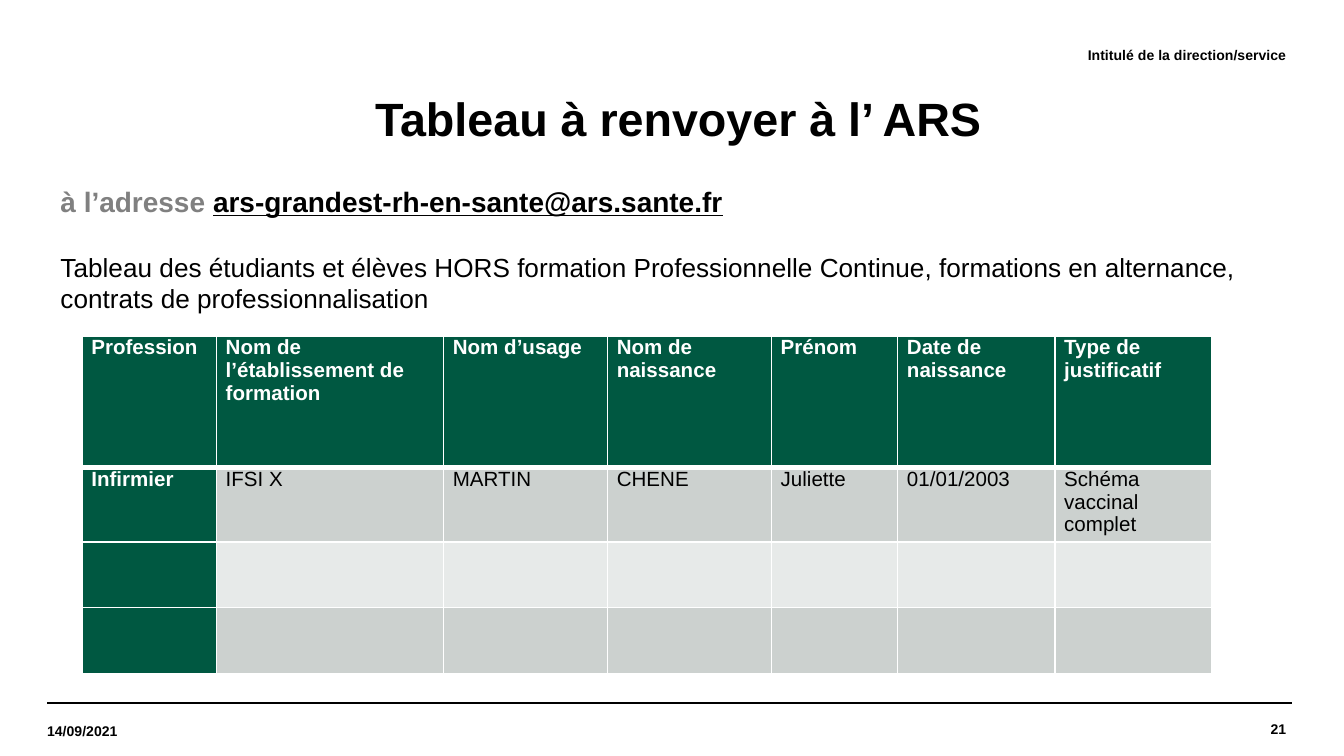
from lxml import etree
from pptx import Presentation
from pptx import util as u
from pptx.dml.color import RGBColor
from pptx.enum import shapes, text
from pptx.oxml.ns import qn

COLORS = {
    "black": "000000",
    "white": "FFFFFF",
    "gray": "808080",
    "green": "005841",
    "band_dark": "CCD1CF",
    "band_light": "E7EAE9",
}
FONT = "Arial"
COLUMN_WIDTHS = [1, 1.69, 1.22, 1.22, 0.94, 1.17, 1.17]
ROW_HEIGHTS = [0.98, 0.49, 0.49, 0.49]
ROWS = [
    ["Profession", "Nom de l’établissement de formation", "Nom d’usage",
     "Nom de naissance", "Prénom", "Date de naissance", "Type de justificatif"],
    ["Infirmier", "IFSI X", "MARTIN", "CHENE", "Juliette", "01/01/2003",
     "Schéma vaccinal complet"],
    [""] * 7,
    [""] * 7,
]


def color(name):
    return RGBColor.from_string(COLORS[name])


def format_font(font, size, color_name="black", bold=False, underline=None):
    font.name = FONT
    font.size = u.Pt(size)
    font.bold = bold
    font.underline = underline
    font.color.rgb = color(color_name)


def add_text(slide, box, runs, size, bold=False, align=text.PP_ALIGN.LEFT,
             anchor=text.MSO_ANCHOR.MIDDLE, indent=0):
    shape = slide.shapes.add_textbox(*[u.Inches(value) for value in box])
    frame = shape.text_frame
    frame.word_wrap = True
    frame.vertical_anchor = anchor
    frame.margin_left = frame.margin_right = 0
    frame.margin_top = frame.margin_bottom = 0
    paragraph = frame.paragraphs[0]
    paragraph.alignment = align
    if indent:
        paragraph._p.get_or_add_pPr().set("marL", str(u.Inches(indent)))
    for content, color_name, underline in runs:
        run = paragraph.add_run()
        run.text = content
        format_font(run.font, size, color_name, bold, underline)
    return paragraph


def add_rule(slide, left, right, top):
    line = slide.shapes.add_connector(
        shapes.MSO_CONNECTOR.STRAIGHT,
        u.Inches(left), u.Inches(top), u.Inches(right), u.Inches(top))
    line.line.color.rgb = color("black")
    line.line.width = u.Pt(0.8)
    etree.SubElement(line._element.spPr, qn("a:effectLst"))


def set_borders(cell, widths):
    properties = cell._tc.get_or_add_tcPr()
    for position, (side, width) in enumerate(widths.items()):
        border = etree.Element(qn(f"a:ln{side}"), w=str(u.Pt(width)))
        fill = etree.SubElement(border, qn("a:solidFill"))
        etree.SubElement(fill, qn("a:srgbClr"), val=COLORS["white"])
        properties.insert(position, border)


def format_cell(cell, content, row, column):
    is_heading = row == 0 or column == 0
    band = "band_dark" if row % 2 else "band_light"
    cell.fill.solid()
    cell.fill.fore_color.rgb = color("green" if is_heading else band)
    cell.margin_left = cell.margin_right = u.Inches(0.07)
    cell.margin_top = cell.margin_bottom = 0
    cell.text_frame.text = content
    format_font(cell.text_frame.paragraphs[0].font, 11)
    for run in cell.text_frame.paragraphs[0].runs:
        format_font(run.font, 11, "white" if is_heading else "black", is_heading)
    if row == 0:
        set_borders(cell, {"L": 1, "R": 1, "T": 1, "B": 3})
    elif row == 1:
        set_borders(cell, {"L": 1, "R": 1, "B": 1})
    else:
        set_borders(cell, {"L": 1, "R": 1, "T": 1, "B": 1})


def add_student_table(slide, left, top):
    table = slide.shapes.add_table(
        len(ROWS), len(COLUMN_WIDTHS), u.Inches(left), u.Inches(top),
        u.Inches(sum(COLUMN_WIDTHS)), u.Inches(sum(ROW_HEIGHTS))).table
    for column, width in zip(table.columns, COLUMN_WIDTHS):
        column.width = u.Inches(width)
    for row, height in zip(table.rows, ROW_HEIGHTS):
        row.height = u.Inches(height)
    for row, contents in enumerate(ROWS):
        for column, content in enumerate(contents):
            format_cell(table.cell(row, column), content, row, column)


def main():
    presentation = Presentation()
    presentation.slide_width = u.Inches(10)
    presentation.slide_height = u.Inches(10 * 9 / 16)
    slide = presentation.slides.add_slide(presentation.slide_layouts[6])
    right = text.PP_ALIGN.RIGHT
    top = text.MSO_ANCHOR.TOP

    for left in (0.35, 0.39):
        add_rule(slide, left, left + 9.22, 5.23)
    add_text(slide, (8.09, 5.23, 1.48, 0.39), [("21", "black", None)], 7.5,
             bold=True, align=right)
    add_text(slide, (0.35, 5.25, 1.28, 0.38), [("14/09/2021", "black", None)],
             7.5, bold=True)
    add_text(slide, (0.35, 1.37, 9.21, 0.27),
             [("à l’adresse ", "gray", None),
              ("ars-grandest-rh-en-sante@ars.sante.fr", "black", True)], 15,
             bold=True, anchor=top, indent=0.1)
    title = add_text(slide, (0.43, 0.61, 9.21, 0.59),
                     [("Tableau à renvoyer à l’ ARS", "black", None)], 25,
                     bold=True, align=text.PP_ALIGN.CENTER, indent=0.02)
    title.line_spacing = 0.9
    add_text(slide, (3.14, 0.21, 6.43, 0.39),
             [("Intitulé de la direction/service", "black", None)], 7.5,
             bold=True, align=right)
    add_text(slide, (0.35, 1.87, 9.21, 3.15),
             [("Tableau des étudiants et élèves HORS formation Professionnelle "
               "Continue, formations en alternance, contrats de "
               "professionnalisation", "black", None)], 14,
             anchor=top, indent=0.1)
    add_student_table(slide, 0.61, 2.5)
    presentation.save("out.pptx")


if __name__ == "__main__":
    main()
